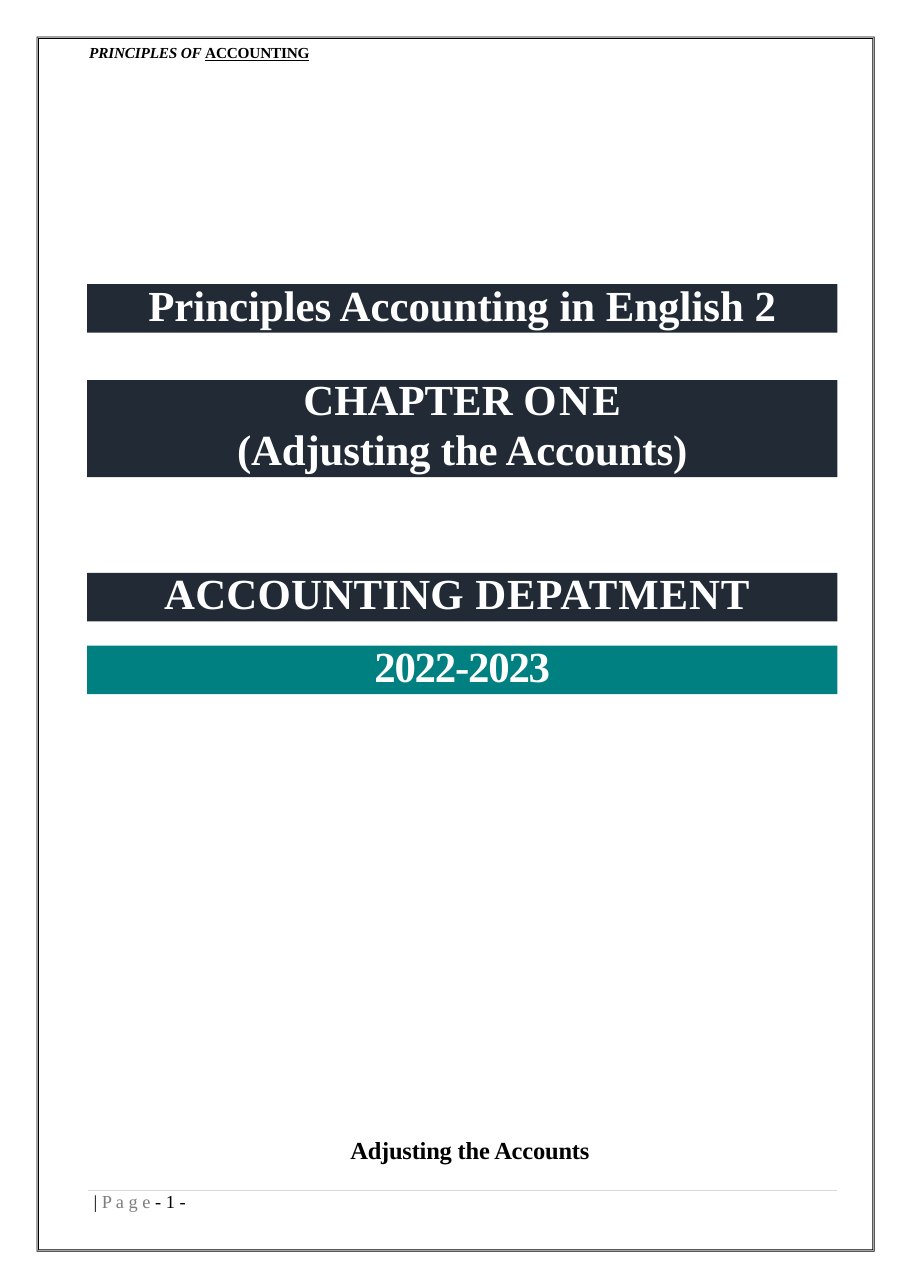
"""Build the cover page of an accounting course booklet."""
from dataclasses import dataclass, field

from lxml import etree
from pptx import Presentation
from pptx.dml.color import RGBColor
from pptx.enum.shapes import MSO_CONNECTOR, MSO_SHAPE
from pptx.enum.text import MSO_ANCHOR, PP_ALIGN
from pptx.oxml.ns import qn
from pptx.slide import Slide
from pptx.text.text import TextFrame
from pptx.util import Inches, Pt

RECTANGLE = MSO_SHAPE.RECTANGLE
STRAIGHT = MSO_CONNECTOR.STRAIGHT
TOP = MSO_ANCHOR.TOP
LEFT, CENTER = PP_ALIGN.LEFT, PP_ALIGN.CENTER

BLACK = RGBColor(0x00, 0x00, 0x00)
WHITE = RGBColor(0xFF, 0xFF, 0xFF)
GRAY = RGBColor(0x7E, 0x7E, 0x7E)
LIGHT_GRAY = RGBColor(0xD9, 0xD9, 0xD9)
NAVY = RGBColor(0x21, 0x2A, 0x35)
TEAL = RGBColor(0x00, 0x80, 0x80)

FONT = "Times New Roman"
BAND_LEFT, BAND_WIDTH = 0.79, 6.81
FRAME_LEFT, FRAME_TOP, FRAME_RIGHT, FRAME_BOTTOM = 333, 333, 7940, 11360
FRAME_INSETS = (0, 7, 14, 21)


@dataclass
class Span:
    """A piece of text with its letter spacing in points and font values."""
    text: str
    spacing: float = 0
    font: dict = field(default_factory=dict)


@dataclass
class Line:
    """A paragraph of spans with an optional exact line height in points."""
    spans: list[Span]
    height: float | None = None
    before: float = 0


@dataclass
class Band:
    """A full-width coloured bar with heading lines."""
    top: float
    height: float
    fill: RGBColor
    lines: list[Line]
    indent: float = 0
    align: PP_ALIGN = CENTER


@dataclass
class Label:
    """A plain text box with one line."""
    left: float
    top: float
    width: float
    height: float
    line: Line
    font: dict


BAND_FONT = {"size": Pt(28), "bold": True, "color": WHITE}

BANDS = [
    Band(2.58, 0.44, NAVY, [Line([Span("Principles Accounting in English 2")], 29.7)]),
    Band(3.45, 0.88, NAVY, [
        Line([Span("CHAPTER "), Span("ONE", 1.6)], 28.7),
        Line([Span("(Adjusting the Accounts)", -0.1)], 32.6),
    ]),
    Band(5.2, 0.44, NAVY, [
        Line([Span("ACCOUNTING ", 0.2), Span("DEPATMENT", 0.6)], 29.7),
    ], 0.7, LEFT),
    Band(5.86, 0.44, TEAL, [Line([Span("2022-2023", -0.8)], 29.9)]),
]

LABELS = [
    Label(0.81, 0.39, 2.07, 0.19, Line([
        Span("PRINCIPLES OF ", -0.1, {"italic": True}),
        Span("ACCOUNTING", -0.1, {"underline": True}),
    ], before=0.9), {"size": Pt(10), "bold": True, "color": BLACK}),
    Label(3.18, 10.3, 2.25, 0.29, Line([Span("Adjusting the Accounts", -0.1)], before=0.9),
          {"size": Pt(16), "bold": True, "color": BLACK}),
    Label(0.85, 10.81, 0.95, 0.21, Line([
        Span("| ", -0.1),
        Span("P a g e ", 0, {"color": GRAY}),
        Span("- 1 -"),
    ], 14.1), {"size": Pt(12), "color": BLACK}),
]


def write_lines(frame: TextFrame, lines: list[Line], font: dict,
                align: PP_ALIGN, indent: float = 0) -> None:
    """Fill a text frame with formatted lines."""
    layout = {"word_wrap": True, "vertical_anchor": TOP, "margin_left": Inches(indent),
              "margin_top": 0, "margin_right": 0, "margin_bottom": 0}
    for name, value in layout.items():
        setattr(frame, name, value)
    for index, line in enumerate(lines):
        para = frame.add_paragraph() if index else frame.paragraphs[0]
        para.alignment = align
        para.space_before = Pt(line.before)
        if line.height:
            para.line_spacing = Pt(line.height)
        for span in line.spans:
            run = para.add_run()
            run.text = span.text
            values = {"name": FONT, **font, **span.font}
            run.font.color.rgb = values.pop("color")
            for name, value in values.items():
                setattr(run.font, name, value)
            if span.spacing:
                run.font._element.set("spc", str(round(span.spacing * 100)))


def draw_band(page: Slide, band: Band) -> None:
    """Draw a coloured bar with its heading."""
    box = page.shapes.add_shape(RECTANGLE, Inches(BAND_LEFT), Inches(band.top),
                                Inches(BAND_WIDTH), Inches(band.height))
    box.shadow.inherit = False
    box.fill.solid()
    box.fill.fore_color.rgb = band.fill
    box.line.fill.background()
    write_lines(box.text_frame, band.lines, BAND_FONT, band.align, band.indent)


def draw_label(page: Slide, label: Label) -> None:
    """Draw a line of plain text."""
    box = page.shapes.add_textbox(Inches(label.left), Inches(label.top),
                                  Inches(label.width), Inches(label.height))
    write_lines(box.text_frame, [label.line], label.font, LEFT)


def draw_footer_rule(page: Slide) -> None:
    """Draw the thin line above the page number."""
    rule = page.shapes.add_connector(STRAIGHT, Inches(0.8), Inches(10.8),
                                     Inches(7.6), Inches(10.8))
    rule.line.color.rgb = LIGHT_GRAY
    rule.line.width = Pt(0.5)
    etree.SubElement(rule._element.spPr, qn("a:effectLst"))


def draw_page_frame(page: Slide) -> None:
    """Draw the double page border as nested rectangular outlines."""
    builder = page.shapes.build_freeform(FRAME_LEFT, FRAME_TOP, scale=Inches(1) / 1000)
    for inset in FRAME_INSETS:
        left, top = FRAME_LEFT + inset, FRAME_TOP + inset
        right, bottom = FRAME_RIGHT - inset, FRAME_BOTTOM - inset
        if inset:
            builder.move_to(left, top)
        builder.add_line_segments([(right, top), (right, bottom), (left, bottom)])
    border = builder.convert_to_shape()
    border.shadow.inherit = False
    border.fill.solid()
    border.fill.fore_color.rgb = BLACK
    border.line.fill.background()


def main() -> None:
    """Create the page and save the deck."""
    deck = Presentation()
    deck.slide_width, deck.slide_height = Inches(8.26), Inches(11.69)
    page = deck.slides.add_slide(deck.slide_layouts[6])
    draw_page_frame(page)
    draw_footer_rule(page)
    for band in BANDS:
        draw_band(page, band)
    for label in LABELS:
        draw_label(page, label)
    deck.save("out.pptx")


if __name__ == "__main__":
    main()
